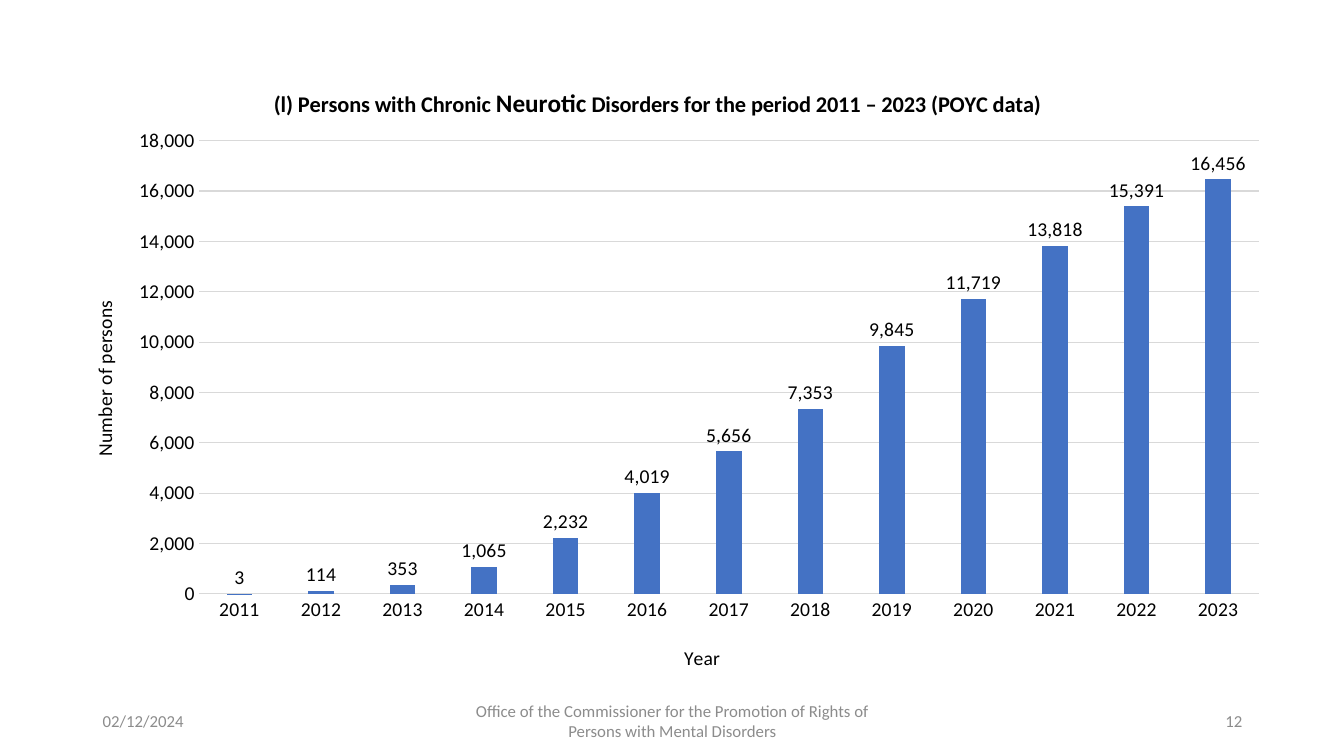
from dataclasses import dataclass

import pptx
import pptx.chart.data
import pptx.dml.color
import pptx.enum.chart
import pptx.enum.text
import pptx.oxml
import pptx.oxml.ns
import pptx.util

Inches = pptx.util.Inches
Pt = pptx.util.Pt
Align = pptx.enum.text.PP_ALIGN
FONT = "Calibri"
COLORS = {"bar": "4472C4", "grid": "D9D9D9", "text": "000000", "foot": "8C8C8C"}
COUNTS = [3, 114, 353, 1065, 2232, 4019, 5656, 7353, 9845,
          11719, 13818, 15391, 16456]
YEARS = [str(2011 + i) for i in range(len(COUNTS))]


@dataclass
class Foot:
    text: str
    left: float
    width: float
    align: Align


FEET = [
    Foot("02/12/2024", 0.92, 3, Align.LEFT),
    Foot("Office of the Commissioner for the Promotion of Rights of "
         "Persons with Mental Disorders", 4.42, 4.5, Align.CENTER),
    Foot("12", 9.42, 3, Align.RIGHT),
]


def rgb(name: str) -> pptx.dml.color.RGBColor:
    return pptx.dml.color.RGBColor.from_string(COLORS[name])


def style(font, size: float = 14, color: str = "text", bold: bool = False) -> None:
    font.name, font.size, font.bold = FONT, Pt(size), bold
    font.color.rgb = rgb(color)


def write(frame, text: str, align: Align = Align.CENTER, **form) -> None:
    """Add a formatted run to the first paragraph of a text frame."""
    para = frame.paragraphs[0]
    para.alignment = align
    run = para.add_run()
    run.text = text
    style(run.font, **form)


def place(node, index: int, **spots: float) -> None:
    """Give a chart part a manual layout in fractions of the chart."""
    name = pptx.oxml.ns.qn("c:layout")
    for old in node.findall(name):
        node.remove(old)
    modes = "".join(f'<c:{k}Mode val="edge"/>' for k in ("x", "y"))
    target = '<c:layoutTarget val="inner"/>' if "w" in spots else ""
    sizes = "".join(f'<c:{k} val="{v}"/>' for k, v in spots.items())
    node.insert(index, pptx.oxml.parse_xml(
        f'<c:layout {pptx.oxml.ns.nsdecls("c")}><c:manualLayout>'
        f"{target}{modes}{sizes}</c:manualLayout></c:layout>"))


def rule(line) -> None:
    line.color.rgb = rgb("grid")
    line.width = Pt(0.75)


def add_foot(slide, foot: Foot) -> None:
    box = slide.shapes.add_textbox(Inches(foot.left), Inches(6.95),
                                   Inches(foot.width), Inches(0.4))
    frame = box.text_frame
    frame.word_wrap = True
    frame.vertical_anchor = pptx.enum.text.MSO_ANCHOR.MIDDLE
    write(frame, foot.text, foot.align, size=12, color="foot")


def set_axes(chart) -> None:
    cat, val = chart.category_axis, chart.value_axis
    spots = [(cat, "Year", 0.507, 0.926), (val, "Number of persons", 0.022, 0.377)]
    for axis, text, x, y in spots:
        axis.major_tick_mark = pptx.enum.chart.XL_TICK_MARK.NONE
        axis.minor_tick_mark = pptx.enum.chart.XL_TICK_MARK.NONE
        style(axis.tick_labels.font)
        title = axis.axis_title
        write(title.text_frame, text)
        place(title._element, 1, x=x, y=y)
    rule(cat.format.line)
    val.format.line.fill.background()
    val.minimum_scale, val.maximum_scale, val.major_unit = 0, 18000, 2000
    val.tick_labels.number_format = "#,##0"
    val.tick_labels.number_format_is_linked = False
    val.has_major_gridlines = True
    rule(val.major_gridlines.format.line)


def set_bars(chart) -> None:
    plot = chart.plots[0]
    plot.gap_width, plot.overlap = 219, -27
    plot.vary_by_categories = False
    fill = plot.series[0].format.fill
    fill.solid()
    fill.fore_color.rgb = rgb("bar")
    plot.has_data_labels = True
    labels = plot.data_labels
    labels.show_value = True
    labels.position = pptx.enum.chart.XL_LABEL_POSITION.OUTSIDE_END
    labels.number_format = "#,##0"
    labels.number_format_is_linked = False
    style(labels.font)


def add_chart(slide) -> None:
    data = pptx.chart.data.CategoryChartData(number_format="#,##0")
    data.categories = YEARS
    data.add_series("Series 1", COUNTS)
    chart = slide.shapes.add_chart(
        pptx.enum.chart.XL_CHART_TYPE.COLUMN_CLUSTERED, Inches(0.6), Inches(0.6),
        Inches(12.13), Inches(6.22), data).chart
    style(chart.font)
    chart.has_legend = False
    title = chart.chart_title
    for text, size in [("(l) Persons with Chronic ", 16), ("Neurotic", 18),
                       (" Disorders for the period 2011 – 2023 (POYC data)", 16)]:
        write(title.text_frame, text, size=size, bold=True)
    place(title._element, 1, x=0.172, y=0.037)
    set_axes(chart)
    set_bars(chart)
    area = chart.plots[0]._element.getparent()
    place(area, 0, x=0.113, y=0.128, w=0.867, h=0.723)


def main() -> None:
    deck = pptx.Presentation()
    deck.slide_width, deck.slide_height = Inches(13.33), Inches(7.5)
    slide = deck.slides.add_slide(deck.slide_layouts[6])
    for foot in FEET:
        add_foot(slide, foot)
    add_chart(slide)
    deck.save("out.pptx")


if __name__ == "__main__":
    main()
